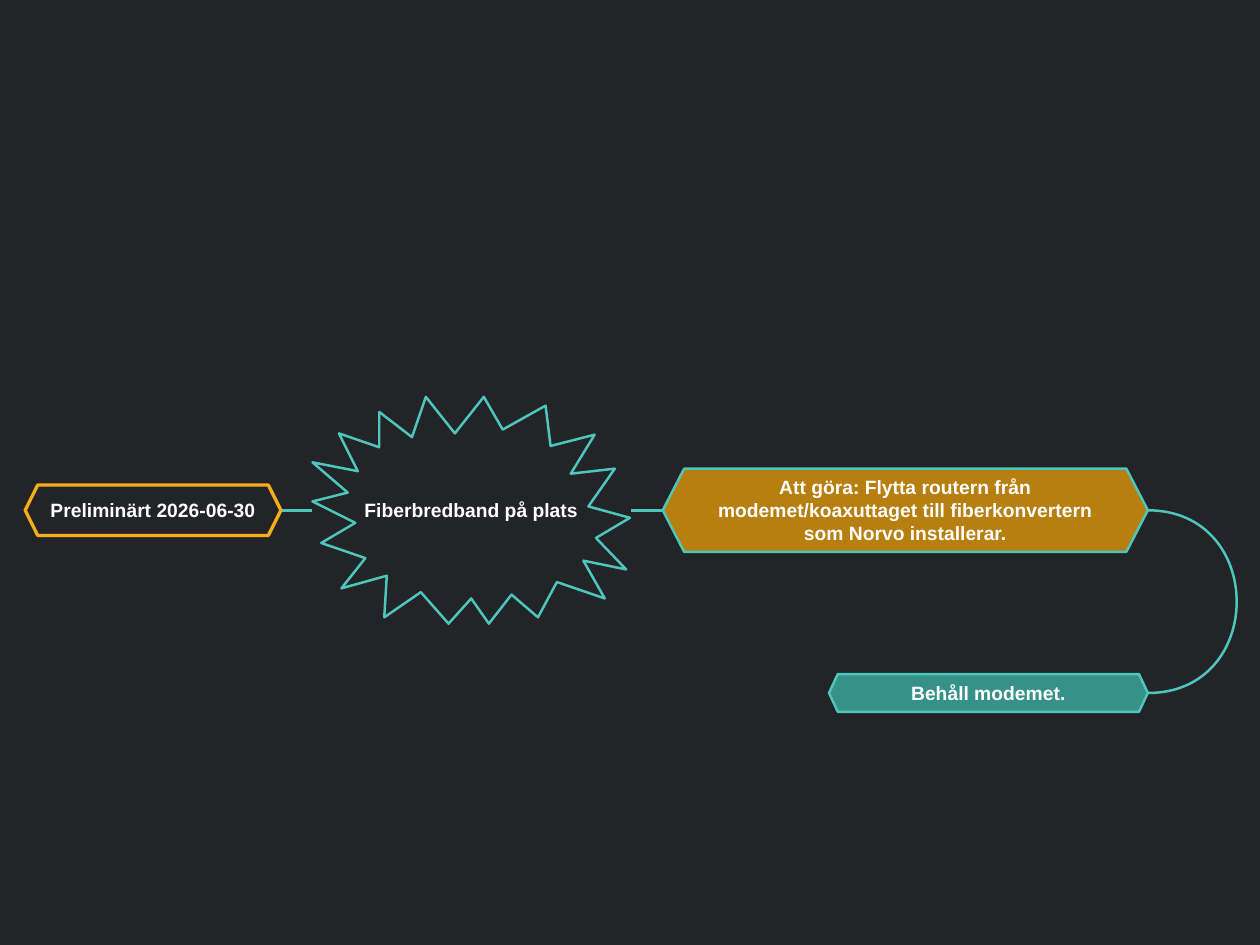
from lxml.etree import SubElement
from pptx import Presentation
from pptx.dml.color import RGBColor
from pptx.enum.shapes import MSO_CONNECTOR as Link
from pptx.enum.text import MSO_ANCHOR as Anchor, PP_ALIGN as Align
from pptx.oxml.ns import qn
from pptx.util import Inches, Pt

DARK = RGBColor(0x23, 0x24, 0x28)
TEAL = RGBColor(0x4D, 0xC7, 0xBC)
SEA = RGBColor(0x36, 0x92, 0x89)
AMBER = RGBColor(0xF8, 0xAE, 0x1A)
OCHRE = RGBColor(0xB6, 0x7F, 0x10)
WHITE = RGBColor(0xFF, 0xFF, 0xFF)

MID, LOW = 4.05, 5.5
BURST = [
    (2.84, 3.74), (2.69, 3.44), (3.01, 3.55), (3.01, 3.27), (3.27, 3.47), (3.38, 3.15),
    (3.61, 3.44), (3.84, 3.15), (3.99, 3.41), (4.33, 3.22), (4.37, 3.54), (4.72, 3.45),
    (4.53, 3.76), (4.88, 3.72), (4.67, 4.02), (5, 4.11), (4.73, 4.27), (4.97, 4.52),
    (4.63, 4.45), (4.8, 4.75), (4.42, 4.62), (4.27, 4.9), (4.06, 4.72), (3.88, 4.95),
    (3.74, 4.75), (3.56, 4.95), (3.34, 4.7), (3.05, 4.9), (3.07, 4.57), (2.71, 4.67),
    (2.9, 4.43), (2.55, 4.31), (2.82, 4.15), (2.48, 3.98), (2.76, 3.91), (2.48, 3.67),
]


class MindMap:
    """Draws the topics and links of a mind map on one slide."""

    font = {"name": "Arial", "size": Pt(11), "bold": True}

    def __init__(self, slide):
        self.slide = slide
        fill = slide.background.fill
        fill.solid()
        fill.fore_color.rgb = DARK

    def stroke(self, shape, color=TEAL, width=1.42):
        shape.line.color.rgb = color
        shape.line.width = Pt(width)

    def outline(self, points, close=True):
        first, *rest = [(Inches(x), Inches(y)) for x, y in points]
        pen = self.slide.shapes.build_freeform(*first)
        pen.add_line_segments(rest, close=close)
        shape = pen.convert_to_shape()
        shape.shadow.inherit = False
        return shape

    def straight(self, left, right, y):
        ends = [Inches(v) for v in (left, y, right, y)]
        line = self.slide.shapes.add_connector(Link.STRAIGHT, *ends)
        SubElement(line._element.spPr, qn("a:effectLst"))
        self.stroke(line)

    def curve(self, x, top, low, reach):
        far = x + reach
        shape = self.outline([(x, top), (far, top), (far, low), (x, low)], False)
        shape.fill.background()
        self.stroke(shape)
        route = next(shape._element.iter(qn("a:path")))
        bend = SubElement(route, qn("a:cubicBezTo"))
        for step in route.findall(qn("a:lnTo")):
            bend.append(step[0])
            route.remove(step)
        shape.width = Inches(reach * 0.75)
        route.set("w", str(shape.width))

    def topic(self, points, text, fill=None, color=TEAL, width=1.42, pad=0, wrap=False):
        shape = self.outline(points)
        if fill is None:
            shape.fill.background()
        else:
            shape.fill.solid()
            shape.fill.fore_color.rgb = fill
        self.stroke(shape, color, width)
        frame = shape.text_frame
        layout = {
            "margin_left": Inches(pad), "margin_right": Inches(pad),
            "margin_top": 0, "margin_bottom": Inches(0.01),
            "word_wrap": wrap, "vertical_anchor": Anchor.MIDDLE,
        }
        for key, value in layout.items():
            setattr(frame, key, value)
        para = frame.paragraphs[0]
        para.alignment = Align.CENTER
        run = para.add_run()
        run.text = text
        for key, value in self.font.items():
            setattr(run.font, key, value)
        run.font.color.rgb = WHITE

    def hexagon(self, left, right, y, half, tip, text, **style):
        points = [
            (left + tip, y - half), (right - tip, y - half), (right, y),
            (right - tip, y + half), (left + tip, y + half), (left, y),
        ]
        self.topic(points, text, **style)


def main():
    deck = Presentation()
    deck.slide_width, deck.slide_height = Inches(10), Inches(7.5)
    chart = MindMap(deck.slides.add_slide(deck.slide_layouts[6]))
    chart.straight(2.23, 2.48, MID)
    chart.straight(5.01, 5.26, MID)
    chart.curve(9.11, MID, LOW, 0.94)
    chart.hexagon(0.2, 2.23, MID, 0.2, 0.1, "Preliminärt 2026-06-30",
                  color=AMBER, width=1.89)
    chart.topic(BURST, "Fiberbredband på plats", fill=DARK)
    chart.hexagon(5.26, 9.11, MID, 0.33, 0.17,
                  "Att göra: Flytta routern från modemet/koaxuttaget "
                  "till fiberkonvertern som Norvo installerar.",
                  fill=OCHRE, pad=0.34, wrap=True)
    chart.hexagon(6.58, 9.11, LOW, 0.15, 0.07, "Behåll modemet.", fill=SEA)
    deck.save("out.pptx")


if __name__ == "__main__":
    main()
